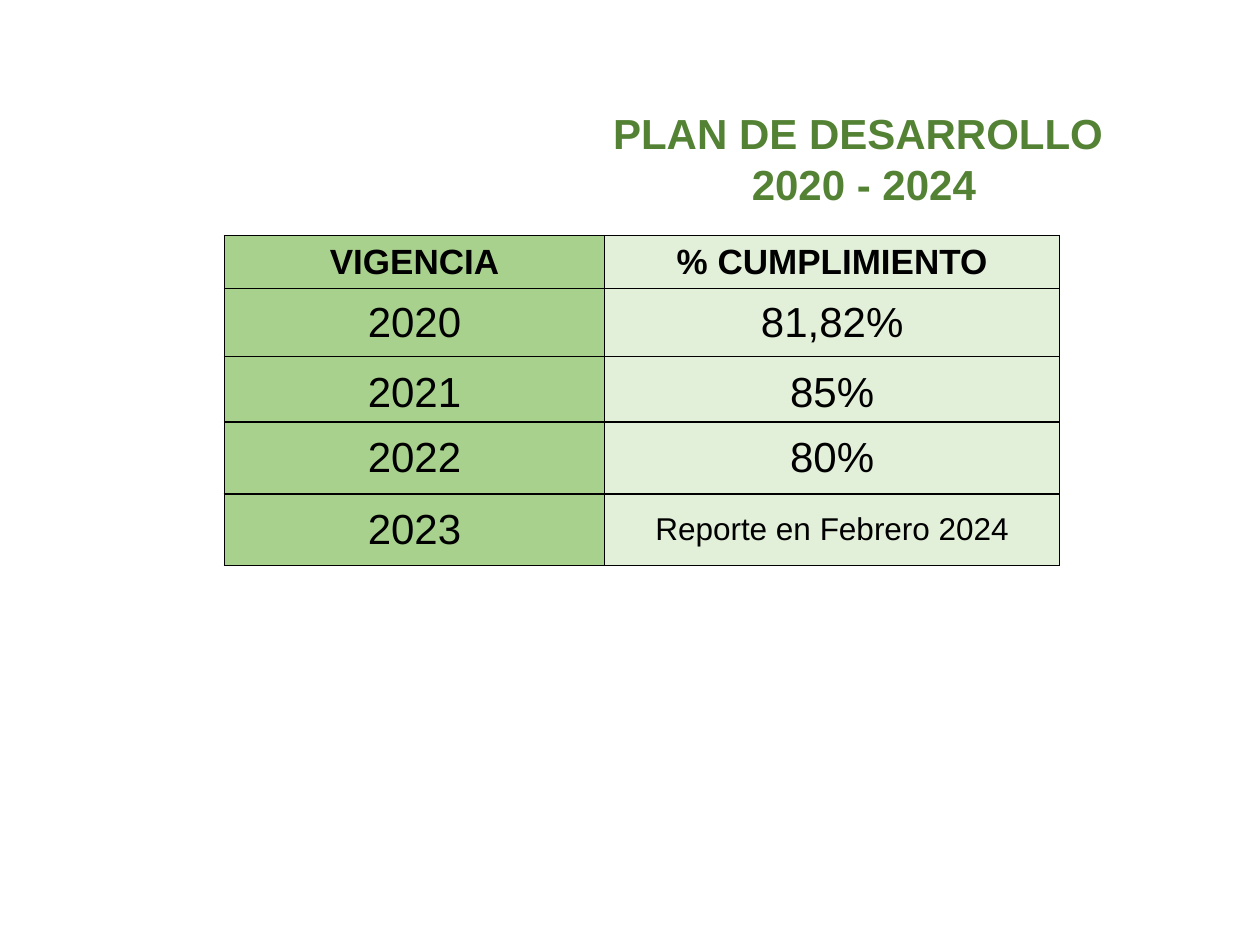
from dataclasses import dataclass

from lxml import etree
from pptx import Presentation
from pptx.dml.color import RGBColor
from pptx.enum.shapes import MSO_SHAPE
from pptx.enum.text import MSO_ANCHOR, PP_ALIGN
from pptx.oxml.ns import qn
from pptx.util import Inches, Pt

RECT = MSO_SHAPE.RECTANGLE
MIDDLE = MSO_ANCHOR.MIDDLE
CENTER = PP_ALIGN.CENTER

SLIDE_W, SLIDE_H = Inches(10), Inches(7.5)
COL, ROW = SLIDE_W / 100, SLIDE_H / 75
FONT = "Arial"
COLORS = {
    "white": "FFFFFF",
    "black": "000000",
    "title": "548235",
    "year": "A9D18E",
    "result": "E2F0D9",
}
TABLE_LEFT = 17.8
TABLE_COLS = (30.2, 36.1)
FILLS = ("year", "result")
BORDERS = ("a:lnL", "a:lnR", "a:lnT", "a:lnB")


@dataclass(frozen=True)
class Record:
    year: str
    result: str
    height: float = 5.7
    year_size: int = 24
    result_size: int = 24
    bold: bool = False


@dataclass(frozen=True)
class Block:
    top: float
    records: tuple[Record, ...]


BLOCKS = (
    Block(18.7, (
        Record("VIGENCIA", "% CUMPLIMIENTO", 4.2, 20, 20, True),
        Record("2020", "81,82%", 5.4),
        Record("2021", "85%"),
    )),
    Block(33.5, (Record("2022", "80%"),)),
    Block(39.2, (Record("2023", "Reporte en Febrero 2024", result_size=18),)),
)


def cols(n: float) -> int:
    return round(n * COL)


def rows(n: float) -> int:
    return round(n * ROW)


def rgb(name: str) -> RGBColor:
    return RGBColor.from_string(COLORS[name])


def write(p, text: str, *, size: int = 24, color: str = "black", bold: bool = False) -> None:
    p.alignment = CENTER
    r = p.add_run()
    r.text = text
    r.font.name = FONT
    r.font.size = Pt(size)
    r.font.bold = bold
    r.font.color.rgb = rgb(color)


def add_borders(cell) -> None:
    tc_pr = cell._tc.get_or_add_tcPr()
    for i, tag in enumerate(BORDERS):
        ln = etree.Element(qn(tag), w=str(Pt(1)))
        fill = etree.SubElement(ln, qn("a:solidFill"))
        etree.SubElement(fill, qn("a:srgbClr"), val=COLORS["black"])
        tc_pr.insert(i, ln)


def fill_cell(cell, text: str, fill: str, size: int, bold: bool) -> None:
    cell.margin_left = cell.margin_right = cell.margin_top = cell.margin_bottom = 0
    cell.vertical_anchor = MIDDLE
    cell.fill.solid()
    cell.fill.fore_color.rgb = rgb(fill)
    add_borders(cell)
    write(cell.text_frame.paragraphs[0], text, size=size, bold=bold)


def add_block(slide, block: Block) -> None:
    height = sum(rec.height for rec in block.records)
    table = slide.shapes.add_table(
        len(block.records), len(TABLE_COLS), cols(TABLE_LEFT), rows(block.top),
        cols(sum(TABLE_COLS)), rows(height),
    ).table
    table.first_row = table.horz_banding = False
    for column, width in zip(table.columns, TABLE_COLS):
        column.width = cols(width)
    for row, rec in zip(table.rows, block.records):
        row.height = rows(rec.height)
        texts = (rec.year, rec.result)
        sizes = (rec.year_size, rec.result_size)
        for cell, text, fill, size in zip(row.cells, texts, FILLS, sizes):
            fill_cell(cell, text, fill, size, rec.bold)


def add_title(slide, lines: tuple[str, ...]) -> None:
    sp = slide.shapes.add_shape(RECT, cols(43.2), rows(8), cols(49.8), rows(9.1))
    sp.shadow.inherit = False
    sp.fill.solid()
    sp.fill.fore_color.rgb = rgb("white")
    sp.line.color.rgb = rgb("white")
    sp.line.width = Pt(1)
    tf = sp.text_frame
    tf.word_wrap = True
    tf.vertical_anchor = MIDDLE
    for i, line in enumerate(lines):
        p = tf.add_paragraph() if i else tf.paragraphs[0]
        write(p, line, color="title", bold=True)


def main() -> None:
    prs = Presentation()
    prs.slide_width, prs.slide_height = SLIDE_W, SLIDE_H
    slide = prs.slides.add_slide(prs.slide_layouts[6])
    add_title(slide, ("PLAN DE DESARROLLO", " 2020 - 2024"))
    for block in BLOCKS:
        add_block(slide, block)
    prs.save("out.pptx")


if __name__ == "__main__":
    main()
